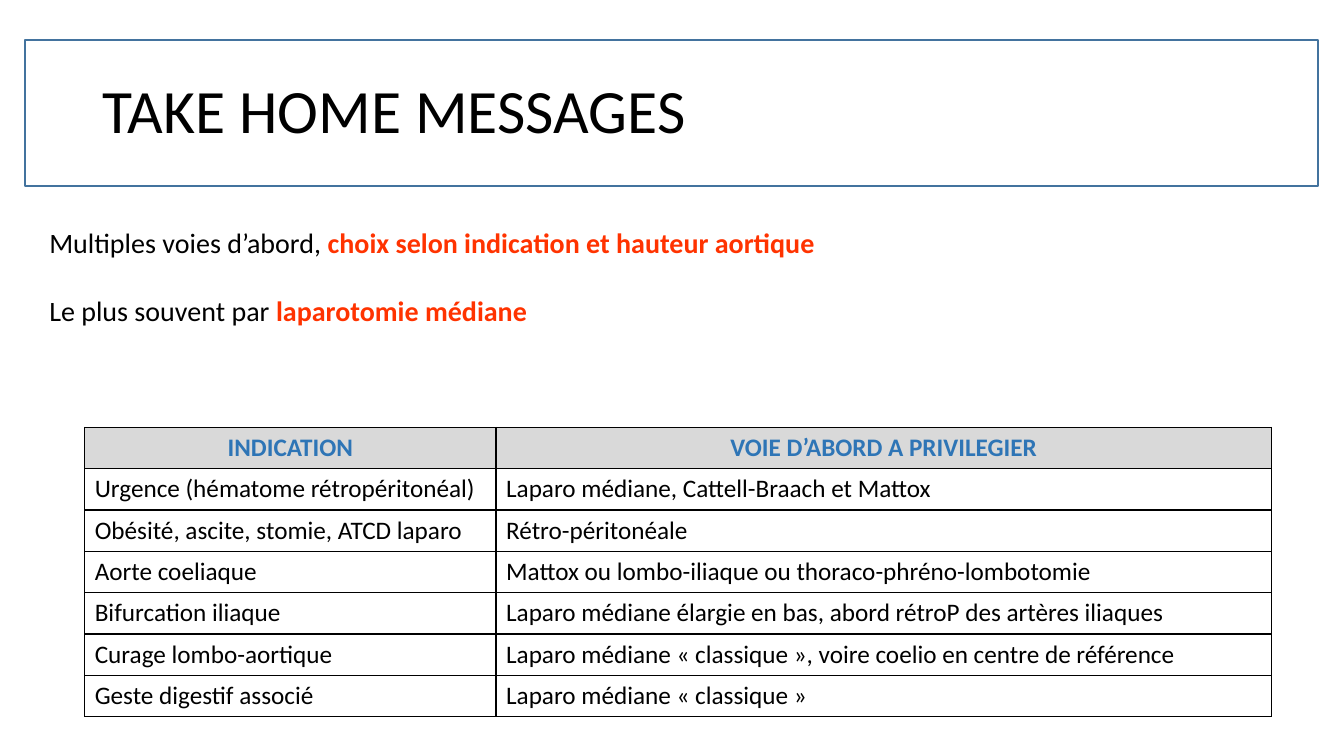
from lxml.etree import SubElement
from pptx import Presentation
from pptx.dml.color import RGBColor
from pptx.enum.shapes import MSO_SHAPE as Shape
from pptx.enum.text import MSO_ANCHOR as Anchor, PP_ALIGN as Align
from pptx.oxml import parse_xml
from pptx.oxml.ns import nsdecls, qn
from pptx.util import Inches, Pt

FONT = "Calibri"
COLORS = {
    "text": "000000",
    "accent": "FF3300",
    "frame": "43739E",
    "header_text": "2E75B6",
    "header_fill": "D9D9D9",
    "cell_fill": "FFFFFF",
    "border": "000000",
}
MESSAGES = [
    ("Multiples voies d’abord, ", "choix selon indication et hauteur aortique"),
    ("Le plus souvent par ", "laparotomie médiane"),
]
APPROACHES = [
    ("INDICATION", "VOIE D’ABORD A PRIVILEGIER"),
    ("Urgence (hématome rétropéritonéal)", "Laparo médiane, Cattell-Braach et Mattox"),
    ("Obésité, ascite, stomie, ATCD laparo", "Rétro-péritonéale"),
    ("Aorte coeliaque", "Mattox ou lombo-iliaque ou thoraco-phréno-lombotomie"),
    ("Bifurcation iliaque", "Laparo médiane élargie en bas, abord rétroP des artères iliaques"),
    ("Curage lombo-aortique", "Laparo médiane « classique », voire coelio en centre de référence"),
    ("Geste digestif associé", "Laparo médiane « classique »"),
]


def color(name):
    return RGBColor.from_string(COLORS[name])


def format_run(run, size, color_name, bold=False):
    run.font.name = FONT
    run.font.size = Pt(size)
    run.font.bold = bold
    run.font.color.rgb = color(color_name)


def add_title(slide, left, top, width, height):
    frame = slide.shapes.add_shape(
        Shape.RECTANGLE, Inches(left), Inches(top), Inches(width), Inches(height))
    frame.shadow.inherit = False
    frame.fill.background()
    frame.line.color.rgb = color("frame")
    frame.line.width = Pt(1.5)

    indent = 0.67
    title = slide.shapes.add_textbox(
        Inches(left + indent), Inches(top), Inches(width - 2 * indent), Inches(height))
    text_frame = title.text_frame
    text_frame.word_wrap = True
    text_frame.vertical_anchor = Anchor.MIDDLE
    text_frame.text = "TAKE HOME MESSAGES"
    paragraph = text_frame.paragraphs[0]
    paragraph.line_spacing = 0.9
    format_run(paragraph.runs[0], 44, "text")


def add_messages(slide, left, top, width, height):
    box = slide.shapes.add_textbox(
        Inches(left), Inches(top), Inches(width), Inches(height))
    text_frame = box.text_frame
    text_frame.word_wrap = True
    for index, (lead, emphasis) in enumerate(MESSAGES):
        paragraph = text_frame.add_paragraph() if index else text_frame.paragraphs[0]
        paragraph.space_before = Pt(24.4 if index else 0)
        for text, color_name, bold in ((lead, "text", False), (emphasis, "accent", True)):
            run = paragraph.add_run()
            run.text = text
            format_run(run, 20, color_name, bold)


def add_borders(cell):
    properties = cell._tc.get_or_add_tcPr()
    for position, side in enumerate(("lnL", "lnR", "lnT", "lnB")):
        line = parse_xml(f'<a:{side} {nsdecls("a")} w="{Pt(1)}"/>')
        fill = SubElement(line, qn("a:solidFill"))
        SubElement(fill, qn("a:srgbClr"), val=COLORS["border"])
        properties.insert(position, line)


def add_approach_table(slide, left, top, column_widths, row_height):
    table = slide.shapes.add_table(
        len(APPROACHES), len(column_widths), Inches(left), Inches(top),
        Inches(sum(column_widths)), Inches(row_height * len(APPROACHES))).table
    for column, width in zip(table.columns, column_widths):
        column.width = Inches(width)
    for row_index, texts in enumerate(APPROACHES):
        header = row_index == 0
        table.rows[row_index].height = Inches(row_height)
        for column_index, text in enumerate(texts):
            cell = table.cell(row_index, column_index)
            cell.text_frame.text = text
            cell.fill.solid()
            cell.fill.fore_color.rgb = color("header_fill" if header else "cell_fill")
            paragraph = cell.text_frame.paragraphs[0]
            paragraph.alignment = Align.CENTER if header else Align.LEFT
            format_run(paragraph.runs[0], 18, "header_text" if header else "text", header)
            add_borders(cell)


def main():
    presentation = Presentation()
    presentation.slide_width = Inches(13.33)
    presentation.slide_height = Inches(7.5)
    slide = presentation.slides.add_slide(presentation.slide_layouts[6])
    add_title(slide, 0.25, 0.4, 12.82, 1.45)
    add_messages(slide, 0.39, 2.19, 12.69, 1.12)
    add_approach_table(slide, 0.84, 4.24, (4.08, 7.69), 0.41)
    presentation.save("out.pptx")


if __name__ == "__main__":
    main()
